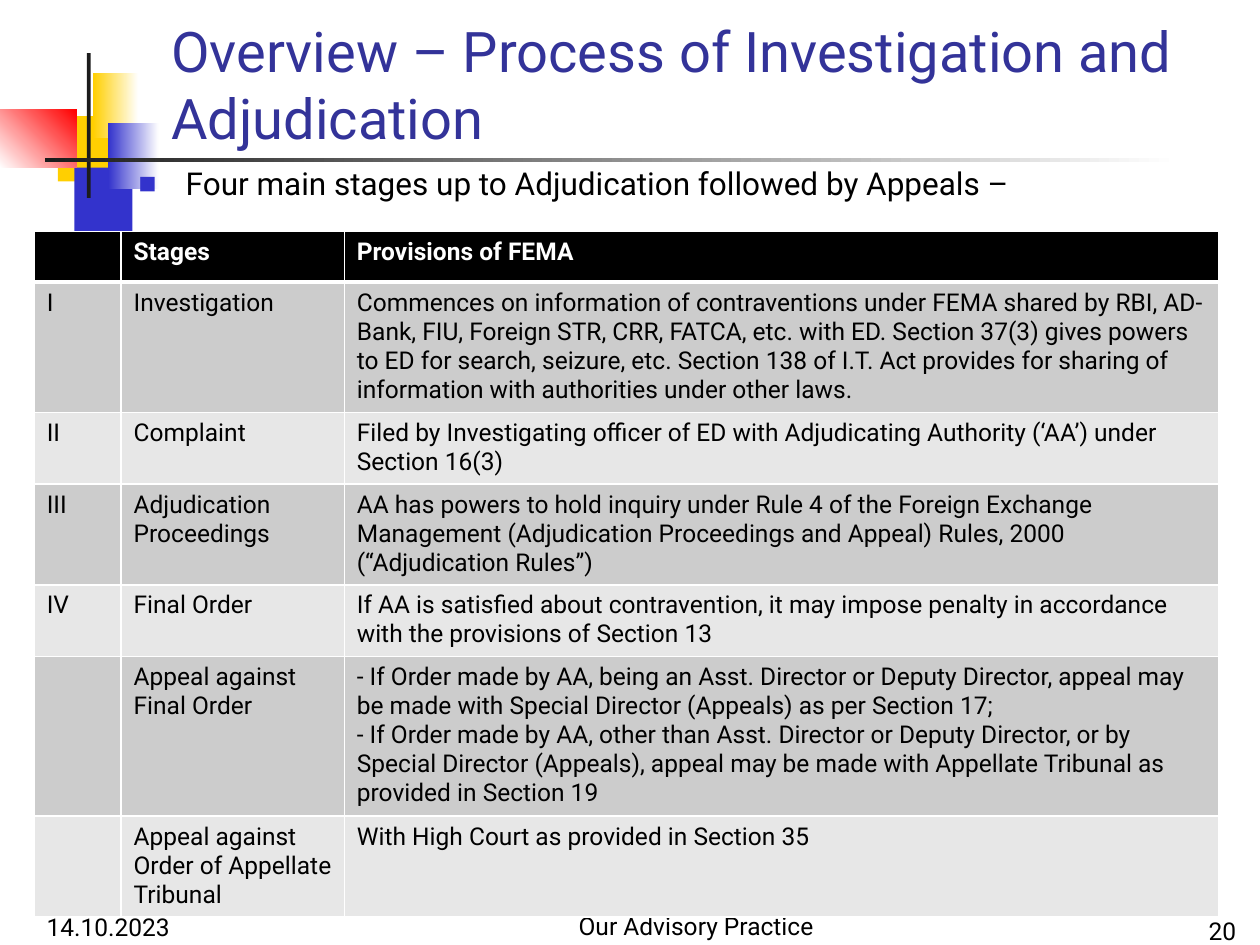
from lxml.etree import SubElement
from pptx import Presentation
from pptx.dml.color import RGBColor
from pptx.enum.shapes import MSO_SHAPE
from pptx.enum.text import MSO_ANCHOR, MSO_AUTO_SIZE, PP_ALIGN
from pptx.oxml import parse_xml
from pptx.oxml.ns import nsdecls, qn
from pptx.util import Cm, Pt

FONT = "Roboto"
HEX = {
    "white": "FFFFFF", "black": "000000", "ink": "1C1C1C", "gold": "FFCF01",
    "blue": "3333CC", "red": "FF0000", "navy": "333399",
    "dark": "CCCCCC", "light": "E7E7E7",
}

# Left, top, width, height in cm, then one colour or two and an angle
DECOR = [
    ((1.17, 2.34, 1.22, 1.32), ("gold",)),
    ((1.5, 3.38, 1.17, 1.32), ("blue",)),
    ((1.88, 1.47, 0.91, 1.32), ("gold", "white", 0)),
    ((2.18, 2.49, 1.02, 1.32), ("blue", "white", 0)),
    ((0, 2.21, 1.55, 1.17), ("white", "red", 45)),
    ((1.75, 1.07, 0.08, 2.92), ("ink",)),
    ((0.91, 3.18, 22.86, 0.08), ("ink", "white", 0)),
]

COLS = [1.75, 4.5, 17.63]
ROWS = [0.97, 2.51, 1.37, 1.96, 1.37, 3.07, 1.96]
STAGES = [
    ("", "Stages", "Provisions of FEMA"),
    ("I", "Investigation",
     "Commences on information of contraventions under FEMA shared by RBI, "
     "AD-Bank, FIU, Foreign STR, CRR, FATCA, etc. with ED. Section 37(3) gives "
     "powers to ED for search, seizure, etc. Section 138 of I.T. Act provides "
     "for sharing of information with authorities under other laws."),
    ("II", "Complaint",
     "Filed by Investigating officer of ED with Adjudicating Authority (‘AA’) "
     "under Section 16(3)"),
    ("III", "Adjudication Proceedings",
     "AA has powers to hold inquiry under Rule 4 of the Foreign Exchange "
     "Management (Adjudication Proceedings and Appeal) Rules, 2000 "
     "(“Adjudication Rules”)"),
    ("IV", "Final Order",
     "If AA is satisfied about contravention, it may impose penalty in "
     "accordance with the provisions of Section 13"),
    ("", "Appeal against Final Order",
     "- If Order made by AA, being an Asst. Director or Deputy Director, appeal "
     "may be made with Special Director (Appeals) as per Section 17;\n"
     "- If Order made by AA, other than Asst. Director or Deputy Director, or by "
     "Special Director (Appeals), appeal may be made with Appellate Tribunal as "
     "provided in Section 19"),
    ("", "Appeal against Order of Appellate Tribunal",
     "With High Court as provided in Section 35"),
]


def color(name):
    return RGBColor.from_string(HEX[name])


def add_run(para, text, size, tint="black", bold=False):
    run = para.add_run()
    run.text = text
    font = run.font
    font.name, font.size, font.bold = FONT, Pt(size), bold
    font.color.rgb = color(tint)


def add_block(slide, box, paint):
    shape = slide.shapes.add_shape(MSO_SHAPE.RECTANGLE, *map(Cm, box))
    shape.shadow.inherit = False
    shape.line.fill.background()
    if len(paint) == 1:
        shape.fill.solid()
        shape.fill.fore_color.rgb = color(paint[0])
    else:
        shape.fill.gradient()
        shape.fill.gradient_angle = paint[2]
        for stop, name in zip(shape.fill.gradient_stops, paint):
            stop.color.rgb = color(name)


def place(slide, shape, box, anchor):
    """Move a placeholder to its box, in front of the blocks."""
    shape.left, shape.top, shape.width, shape.height = map(Cm, box)
    slide.shapes.element.append(shape.element)
    frame = shape.text_frame
    frame.auto_size = MSO_AUTO_SIZE.NONE
    frame.vertical_anchor = anchor
    para = frame.paragraphs[0]
    para.alignment = PP_ALIGN.LEFT
    return para


def add_bullet(para):
    para.space_before = Pt(3.6)
    props = para._p.get_or_add_pPr()
    props.set("marL", str(Cm(0.95)))
    props.set("indent", str(Cm(-0.95)))
    tint = SubElement(props, qn("a:buClr"))
    SubElement(tint, qn("a:srgbClr"), val=HEX["blue"])
    SubElement(props, qn("a:buSzPct"), val="60000")
    SubElement(props, qn("a:buFont"), typeface=FONT)
    SubElement(props, qn("a:buChar"), char="■")


def add_note(slide, box, text, align):
    frame = slide.shapes.add_textbox(*map(Cm, box)).text_frame
    frame.word_wrap = True
    frame.vertical_anchor = MSO_ANCHOR.BOTTOM
    para = frame.paragraphs[0]
    para.alignment = align
    add_run(para, text, 14)


def set_edges(cell, widths):
    props = cell._tc.get_or_add_tcPr()
    for spot, (side, width) in enumerate(zip("LRTB", widths)):
        props.insert(spot, parse_xml(
            f'<a:ln{side} {nsdecls("a")} w="{Pt(width)}"><a:solidFill>'
            f'<a:srgbClr val="{HEX["white"]}"/></a:solidFill></a:ln{side}>'))


def fill_cell(cell, text, row):
    head = row == 0
    cell.fill.solid()
    cell.fill.fore_color.rgb = color(
        "black" if head else "dark" if row % 2 else "light")
    # The rule below the heading row is thicker
    set_edges(cell, (1, 1, 3 if row == 1 else 1, 3 if head else 1))
    if not text:
        return
    frame = cell.text_frame
    for i, line in enumerate(text.split("\n")):
        para = frame.add_paragraph() if i else frame.paragraphs[0]
        add_run(para, line, 14, "white" if head else "black", head)


def add_stages(slide):
    table = slide.shapes.add_table(
        len(ROWS), len(COLS), Cm(0.69), Cm(4.67),
        Cm(sum(COLS)), Cm(sum(ROWS))).table
    for col, width in zip(table.columns, COLS):
        col.width = Cm(width)
    for r, (height, texts) in enumerate(zip(ROWS, STAGES)):
        table.rows[r].height = Cm(height)
        for c, text in enumerate(texts):
            fill_cell(table.cell(r, c), text, r)


def main():
    deck = Presentation()
    deck.slide_width, deck.slide_height = Cm(25.4), Cm(19.05)
    slide = deck.slides.add_slide(deck.slide_layouts[1])

    # Corner blocks and rules
    for box, paint in DECOR:
        add_block(slide, box, paint)

    # Title and lead line
    title, body = slide.shapes.title, slide.placeholders[1]
    para = place(slide, title, (3.2, 0.58, 21.64, 2.59), MSO_ANCHOR.BOTTOM)
    add_run(para, "Overview – Process of Investigation and Adjudication",
            32, "navy")
    para = place(slide, body, (2.54, 3.18, 21.39, 14.6), MSO_ANCHOR.TOP)
    add_bullet(para)
    add_run(para, "Four main stages up to Adjudication followed by Appeals –", 18)

    # Footer
    add_note(slide, (0.69, 17.83, 5.28, 1.27), "14.10.2023", PP_ALIGN.LEFT)
    add_note(slide, (10.01, 17.81, 8.05, 1.27), "Our Advisory Practice",
             PP_ALIGN.CENTER)
    add_note(slide, (19.89, 17.91, 5.28, 1.27), "20", PP_ALIGN.RIGHT)

    # Table of stages
    add_stages(slide)
    deck.save("out.pptx")


if __name__ == "__main__":
    main()
